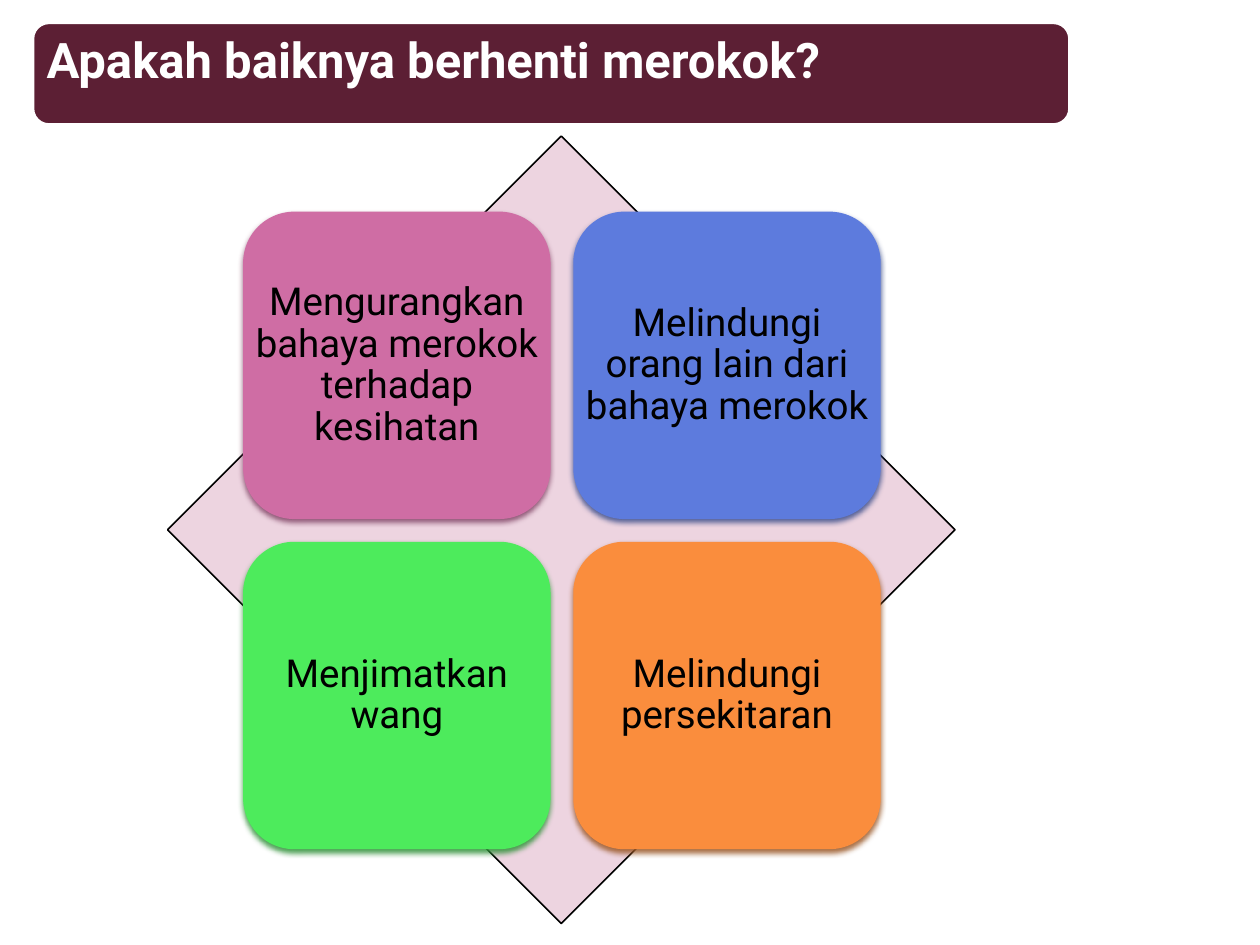
from dataclasses import dataclass

import pptx
import pptx.dml.color
import pptx.enum.shapes
import pptx.enum.text
import pptx.oxml
import pptx.oxml.ns
import pptx.util
from pptx.dml.color import RGBColor
from pptx.enum.shapes import MSO_SHAPE
from pptx.util import Inches

FONT = "Roboto"
WHITE = RGBColor(0xFF, 0xFF, 0xFF)
BLACK = RGBColor(0x00, 0x00, 0x00)
MAROON = RGBColor(0x5C, 0x1F, 0x34)
PALE_PINK = RGBColor(0xED, 0xD4, 0xE0)
PINK = RGBColor(0xCF, 0x6D, 0xA4)
PINK_SHADOW = RGBColor(0x80, 0x43, 0x65)
BLUE = RGBColor(0x5D, 0x7B, 0xDD)
BLUE_SHADOW = RGBColor(0x3A, 0x4C, 0x89)
GREEN = RGBColor(0x4D, 0xEB, 0x5C)
GREEN_SHADOW = RGBColor(0x30, 0x91, 0x39)
ORANGE = RGBColor(0xFA, 0x8D, 0x3D)
ORANGE_SHADOW = RGBColor(0x9A, 0x57, 0x26)

TILE_LEFT, TILE_TOP = 1.93, 1.68
TILE_SIZE, TILE_STEP = 2.44, 2.62


@dataclass(frozen=True)
class Box:
    left: float
    top: float
    width: float
    height: float

    def lengths(self) -> list[pptx.util.Length]:
        return [Inches(value) for value in (self.left, self.top, self.width, self.height)]


@dataclass(frozen=True)
class Benefit:
    text: str
    fill: RGBColor
    shadow: RGBColor


TITLE_BOX = Box(0.25, 0.17, 8.25, 0.83)
DIAMOND_BOX = Box(1.33, 1.08, 6.25, 6.25)
BENEFITS = [
    Benefit("Mengurangkan bahaya merokok terhadap kesihatan", PINK, PINK_SHADOW),
    Benefit("Melindungi orang lain dari bahaya merokok", BLUE, BLUE_SHADOW),
    Benefit("Menjimatkan wang", GREEN, GREEN_SHADOW),
    Benefit("Melindungi persekitaran", ORANGE, ORANGE_SHADOW),
]


def add_filled_shape(slide, kind: MSO_SHAPE, box: Box, fill: RGBColor):
    shape = slide.shapes.add_shape(kind, *box.lengths())
    shape.shadow.inherit = False
    shape.fill.solid()
    shape.fill.fore_color.rgb = fill
    shape.line.fill.background()
    return shape


def set_outline(shape, color: RGBColor, points: float) -> None:
    shape.line.color.rgb = color
    shape.line.width = pptx.util.Pt(points)


def add_shadow(shape, color: RGBColor) -> None:
    effects = shape.element.spPr.find(pptx.oxml.ns.qn("a:effectLst"))
    effects.append(pptx.oxml.parse_xml(
        f'<a:outerShdw {pptx.oxml.ns.nsdecls("a")} blurRad="{pptx.util.Pt(3.1)}" '
        f'dist="{pptx.util.Pt(2)}" dir="5400000" rotWithShape="0">'
        f'<a:srgbClr val="{color}"><a:alpha val="83000"/></a:srgbClr></a:outerShdw>'
    ))


def write_text(shape, text: str, size: int, color: RGBColor, inset: float,
               alignment, anchor, bold: bool = False) -> None:
    frame = shape.text_frame
    frame.text = text
    frame.word_wrap = True
    frame.auto_size = pptx.enum.text.MSO_AUTO_SIZE.NONE
    frame.vertical_anchor = anchor
    frame.margin_left = frame.margin_right = Inches(inset)
    frame.margin_top = frame.margin_bottom = Inches(inset)
    paragraph = frame.paragraphs[0]
    paragraph.alignment = alignment
    paragraph.line_spacing = 0.9
    paragraph.space_before = pptx.util.Pt(0)
    paragraph.font.name = FONT
    paragraph.font.size = pptx.util.Pt(size)
    paragraph.font.bold = bold
    paragraph.font.color.rgb = color


def add_title(slide) -> None:
    banner = add_filled_shape(slide, MSO_SHAPE.ROUNDED_RECTANGLE, TITLE_BOX, MAROON)
    set_outline(banner, WHITE, 3.15)
    title = slide.shapes.title
    title.left, title.top, title.width, title.height = TITLE_BOX.lengths()
    write_text(title, "Apakah baiknya berhenti merokok?", 28, WHITE, 0.12,
               pptx.enum.text.PP_ALIGN.LEFT, pptx.enum.text.MSO_ANCHOR.TOP, bold=True)
    banner.element.addnext(title.element)


def add_benefit(slide, benefit: Benefit, index: int) -> None:
    row, column = divmod(index, 2)
    box = Box(TILE_LEFT + column * TILE_STEP, TILE_TOP + row * TILE_STEP,
              TILE_SIZE, TILE_SIZE)
    tile = add_filled_shape(slide, MSO_SHAPE.ROUNDED_RECTANGLE, box, benefit.fill)
    add_shadow(tile, benefit.shadow)
    label = slide.shapes.add_textbox(*box.lengths())
    write_text(label, benefit.text, 22, BLACK, 0.09,
               pptx.enum.text.PP_ALIGN.CENTER, pptx.enum.text.MSO_ANCHOR.MIDDLE)


def main() -> None:
    presentation = pptx.Presentation()
    presentation.slide_width = Inches(10)
    presentation.slide_height = Inches(7.5)
    slide = presentation.slides.add_slide(presentation.slide_layouts[5])
    add_title(slide)
    diamond = add_filled_shape(slide, MSO_SHAPE.DIAMOND, DIAMOND_BOX, PALE_PINK)
    set_outline(diamond, BLACK, 0.9)
    for index, benefit in enumerate(BENEFITS):
        add_benefit(slide, benefit, index)
    presentation.save("out.pptx")


if __name__ == "__main__":
    main()
